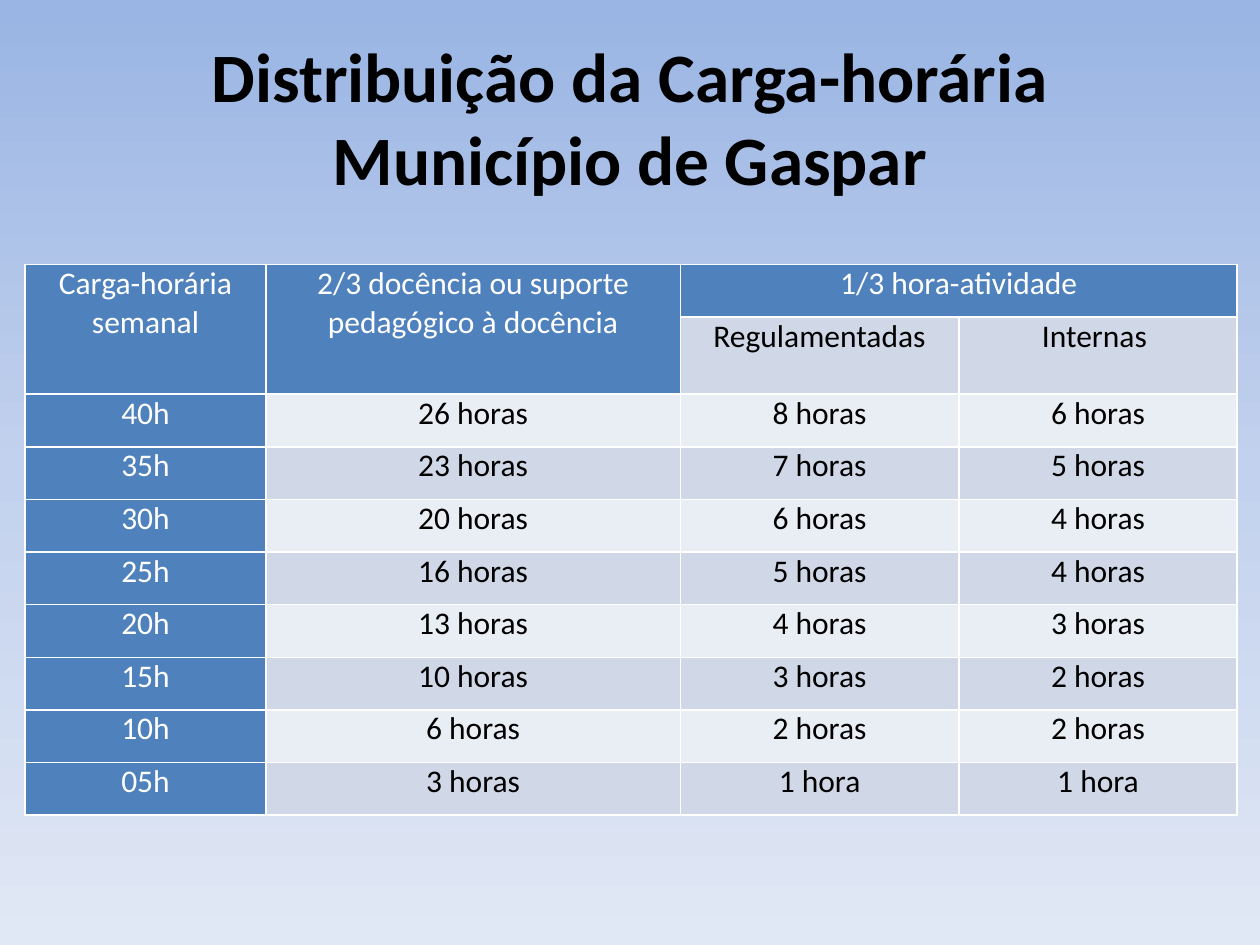
"""Build the slide on weekly workload distribution."""
from copy import deepcopy
from lxml import etree
from pptx import Presentation
from pptx.dml.color import RGBColor
from pptx.enum import text
from pptx.oxml import ns
from pptx.util import Inches, Pt

TITLE = "Distribuição da Carga-horária Município de Gaspar"
ROWS = [
    ("Carga-horária semanal", "2/3 docência ou suporte pedagógico à docência",
     "1/3 hora-atividade", ""),
    ("", "", "Regulamentadas", "Internas "),
    ("40h", "26 horas", "8 horas", "6 horas"),
    ("35h", "23 horas", "7 horas", "5 horas"),
    ("30h", "20 horas", "6 horas", "4 horas"),
    ("25h", "16 horas", "5 horas", "4 horas"),
    ("20h", "13 horas", "4 horas", "3 horas"),
    ("15h", "10 horas", "3 horas", "2 horas"),
    ("10h", "6 horas", "2 horas", "2 horas"),
    ("05h", "3 horas", "1 hora", "1 hora"),
]
MERGES = [((0, 0), (1, 0)), ((0, 1), (1, 1)), ((0, 2), (0, 3))]
WIDTHS = [1.91, 3.29, 2.21, 2.21]
HIGH, SUBHIGH = 0.418, 0.61

BLACK = RGBColor(0, 0, 0)
WHITE = RGBColor(255, 255, 255)
BLUE = RGBColor(0x4F, 0x81, 0xBD)
BANDS = [RGBColor(0xE9, 0xED, 0xF4), RGBColor(0xD0, 0xD8, 0xE8)]
SKY = [(0, RGBColor(0x9A, 0xB5, 0xE4)), (0.5, RGBColor(0xC2, 0xD1, 0xED)),
       (1, RGBColor(0xE1, 0xE8, 0xF5))]


def style(frame, size, color, bold=False):
    para = frame.paragraphs[0]
    para.alignment = text.PP_ALIGN.CENTER
    font = para.runs[0].font if para.runs else para.font
    font.name, font.size, font.bold = "Calibri", Pt(size), bold
    font.color.rgb = color


def paint(slide):
    fill = slide.background.fill
    fill.gradient()
    fill.gradient_angle = 270
    first = slide._element.find(".//" + ns.qn("a:gs"))
    first.addnext(deepcopy(first))
    for stop, (place, color) in zip(fill.gradient_stops, SKY):
        stop.position = place
        stop.color.rgb = color


def border(cell):
    props = cell._tc.get_or_add_tcPr()
    for spot, side in enumerate("LRTB"):
        line = etree.Element(ns.qn("a:ln" + side), w=str(Pt(1)))
        solid = etree.SubElement(line, ns.qn("a:solidFill"))
        etree.SubElement(solid, ns.qn("a:srgbClr"), val=str(WHITE))
        props.insert(spot, line)


def add_hours(slide):
    high = [SUBHIGH if row == 1 else HIGH for row in range(len(ROWS))]
    table = slide.shapes.add_table(
        len(ROWS), len(WIDTHS), Inches(0.2), Inches(2.1),
        Inches(sum(WIDTHS)), Inches(sum(high))).table
    for col, width in zip(table.columns, WIDTHS):
        col.width = Inches(width)
    for row, tall in zip(table.rows, high):
        row.height = Inches(tall)
    for row, words in enumerate(ROWS):
        for col, word in enumerate(words):
            cell = table.cell(row, col)
            head = row == 0 or col == 0 or (row, col) == (1, 1)
            cell.text_frame.text = word
            cell.margin_left = cell.margin_right = Inches(0.07)
            cell.margin_top = cell.margin_bottom = 0
            cell.fill.solid()
            cell.fill.fore_color.rgb = BLUE if head else BANDS[row % 2]
            style(cell.text_frame, 18, WHITE if head else BLACK)
            border(cell)
    for start, end in MERGES:
        table.cell(*start).merge(table.cell(*end))


def add_title(slide):
    box = slide.shapes.add_textbox(Inches(0.5), Inches(0.3), Inches(9), Inches(1.25))
    frame = box.text_frame
    frame.word_wrap = True
    frame.vertical_anchor = text.MSO_ANCHOR.MIDDLE
    frame.text = TITLE
    style(frame, 39.6, BLACK, True)


def main():
    deck = Presentation()
    deck.slide_width, deck.slide_height = Inches(10), Inches(7.5)
    slide = deck.slides.add_slide(deck.slide_layouts[6])
    paint(slide)
    add_hours(slide)
    add_title(slide)
    deck.save("out.pptx")


if __name__ == "__main__":
    main()
